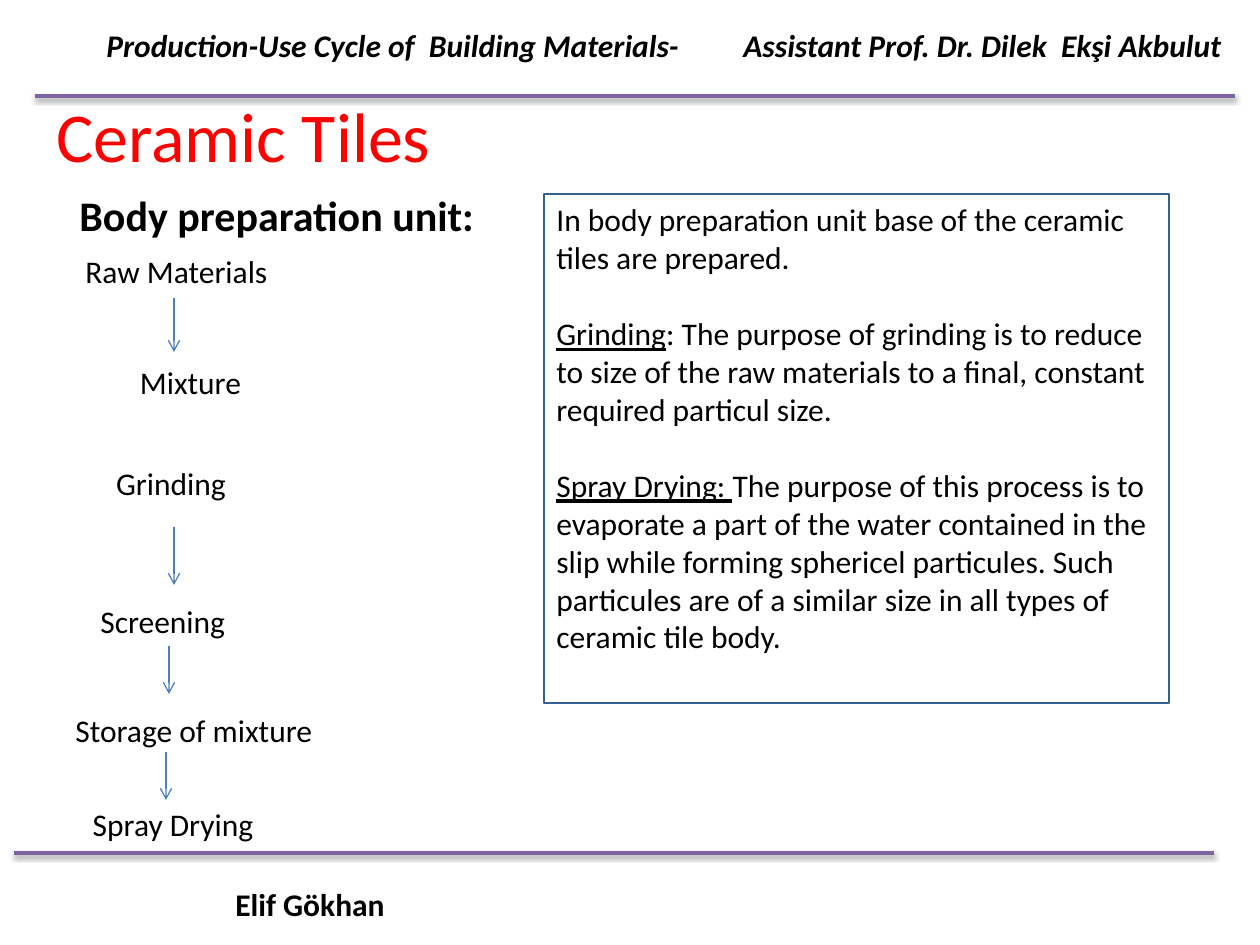
"""Build the ceramic tiles body preparation slide."""
from dataclasses import dataclass

from lxml import etree
from pptx import Presentation
from pptx import util as u
from pptx.dml.color import RGBColor
from pptx.enum import shapes, text
from pptx.oxml import ns, parse_xml

PX = 914400 / 126
LEFT, CENTER = text.PP_ALIGN.LEFT, text.PP_ALIGN.CENTER
TOP, MIDDLE = text.MSO_ANCHOR.TOP, text.MSO_ANCHOR.MIDDLE


def px(n):
    return u.Emu(round(n * PX))


@dataclass(frozen=True)
class Theme:
    font: str = "Calibri"
    ink: str = "000000"
    title: str = "FF0000"
    rule: str = "8064A2"
    border: str = "376092"
    arrow: str = "4B7EBC"
    title_size: int = 40
    heading_size: int = 24
    body_size: int = 18
    gap: int = 22
    rule_width: float = 2
    thin_width: float = 0.75


class Deck:
    def __init__(self, prs, theme):
        self.theme = theme
        self.s = prs.slides.add_slide(prs.slide_layouts[6])

    def set_text(self, sp, paragraphs, size=None, color=None, align=LEFT, anchor=TOP, **style):
        tf = sp.text_frame
        frame = {"word_wrap": True, "auto_size": text.MSO_AUTO_SIZE.NONE, "vertical_anchor": anchor}
        for name, value in frame.items():
            setattr(tf, name, value)
        fmt = {"name": self.theme.font, "size": u.Pt(size or self.theme.body_size), **style}
        for i, runs in enumerate(paragraphs):
            p = tf.add_paragraph() if i else tf.paragraphs[0]
            p.alignment = align
            if i:
                p.space_before = u.Pt(self.theme.gap)
            for words, underline in runs:
                r = p.add_run()
                r.text = words
                for name, value in {**fmt, "underline": underline}.items():
                    setattr(r.font, name, value)
                r.font.color.rgb = RGBColor.from_string(color or self.theme.ink)

    def label(self, words, x, y, w, h=50, **style):
        sp = self.s.shapes.add_textbox(*map(px, (x, y, w, h)))
        self.set_text(sp, [[(words, None)]], **style)
        return sp

    def header(self, left, right, x, y, w, stop):
        sp = self.label(f"{left}\t{right}", x, y, w, bold=True, italic=True)
        pPr = sp.text_frame.paragraphs[0]._p.get_or_add_pPr()
        tabs = etree.SubElement(pPr, ns.qn("a:tabLst"))
        etree.SubElement(tabs, ns.qn("a:tab"), pos=str(px(stop)), algn="l")

    def panel(self, paragraphs, x, y, w, h):
        sp = self.s.shapes.add_shape(shapes.MSO_SHAPE.RECTANGLE, *map(px, (x, y, w, h)))
        sp.shadow.inherit = False
        sp.fill.background()
        sp.line.color.rgb = RGBColor.from_string(self.theme.border)
        sp.line.width = u.Pt(self.theme.thin_width)
        self.set_text(sp, paragraphs)

    def line(self, x1, y1, x2, y2, color, width):
        c = self.s.shapes.add_connector(shapes.MSO_CONNECTOR.STRAIGHT, *map(px, (x1, y1, x2, y2)))
        c.line.color.rgb = RGBColor.from_string(color)
        c.line.width = u.Pt(width)
        effects = etree.SubElement(c._element.spPr, ns.qn("a:effectLst"))
        return c, effects

    def rule(self, x, y, w):
        _, effects = self.line(x, y, x + w, y, self.theme.rule, self.theme.rule_width)
        effects.append(parse_xml(
            f'<a:outerShdw {ns.nsdecls("a")} blurRad="{u.Pt(3.1)}" dist="{u.Pt(1.6)}" '
            'dir="5400000" rotWithShape="0"><a:srgbClr val="000000">'
            '<a:alpha val="38000"/></a:srgbClr></a:outerShdw>'))

    def arrow(self, x, y1, y2):
        c, _ = self.line(x, y1, x, y2, self.theme.arrow, self.theme.thin_width)
        etree.SubElement(c.line._get_or_add_ln(), ns.qn("a:tailEnd"), type="arrow")


STEPS = [
    ("Raw Materials", 73, 246, 209, LEFT),
    ("Mixture", 48, 357, 285, CENTER),
    ("Grinding", 62, 458, 218, CENTER),
    ("Screening", 88, 596, 179, LEFT),
    ("Storage of mixture", 63, 705, 265, LEFT),
    ("Spray Drying", -1, 799, 348, CENTER),
]
ARROWS = [(174, 298, 352), (174, 527, 585), (169, 646, 694), (166, 752, 800)]
NOTES = [
    [("In body preparation unit base of the ceramic tiles are prepared.", False)],
    [("Grinding", True),
     (": The purpose of grinding is to reduce to size of the raw materials to a final, "
      "constant required particul size.", False)],
    [("Spray Drying: ", True),
     ("The purpose of this process is to evaporate a part of the water contained in the slip "
      "while forming sphericel particules. Such particules are of a similar size in all types "
      "of ceramic tile body.", False)],
]


def main():
    prs = Presentation()
    prs.slide_width, prs.slide_height = px(1260), px(945)
    theme = Theme()
    deck = Deck(prs, theme)
    deck.rule(35, 96, 1200)
    deck.header("Production-Use Cycle of  Building Materials-",
                "Assistant Prof. Dr. Dilek  Ekşi Akbulut", 94, 20, 1156, 637)
    deck.rule(14, 853, 1200)
    deck.label("Elif Gökhan", 223, 879, 176, bold=True)
    deck.label("Ceramic Tiles", 44, 55, 1134, 158,
               size=theme.title_size, color=theme.title, anchor=MIDDLE)
    deck.panel(NOTES, 544, 194, 625, 509)
    deck.label("Body preparation unit:", 67, 183, 425, 63, size=theme.heading_size, bold=True)
    for words, x, y, w, align in STEPS:
        deck.label(words, x, y, w, align=align)
    for x, y1, y2 in ARROWS:
        deck.arrow(x, y1, y2)
    prs.save("out.pptx")


if __name__ == "__main__":
    main()
